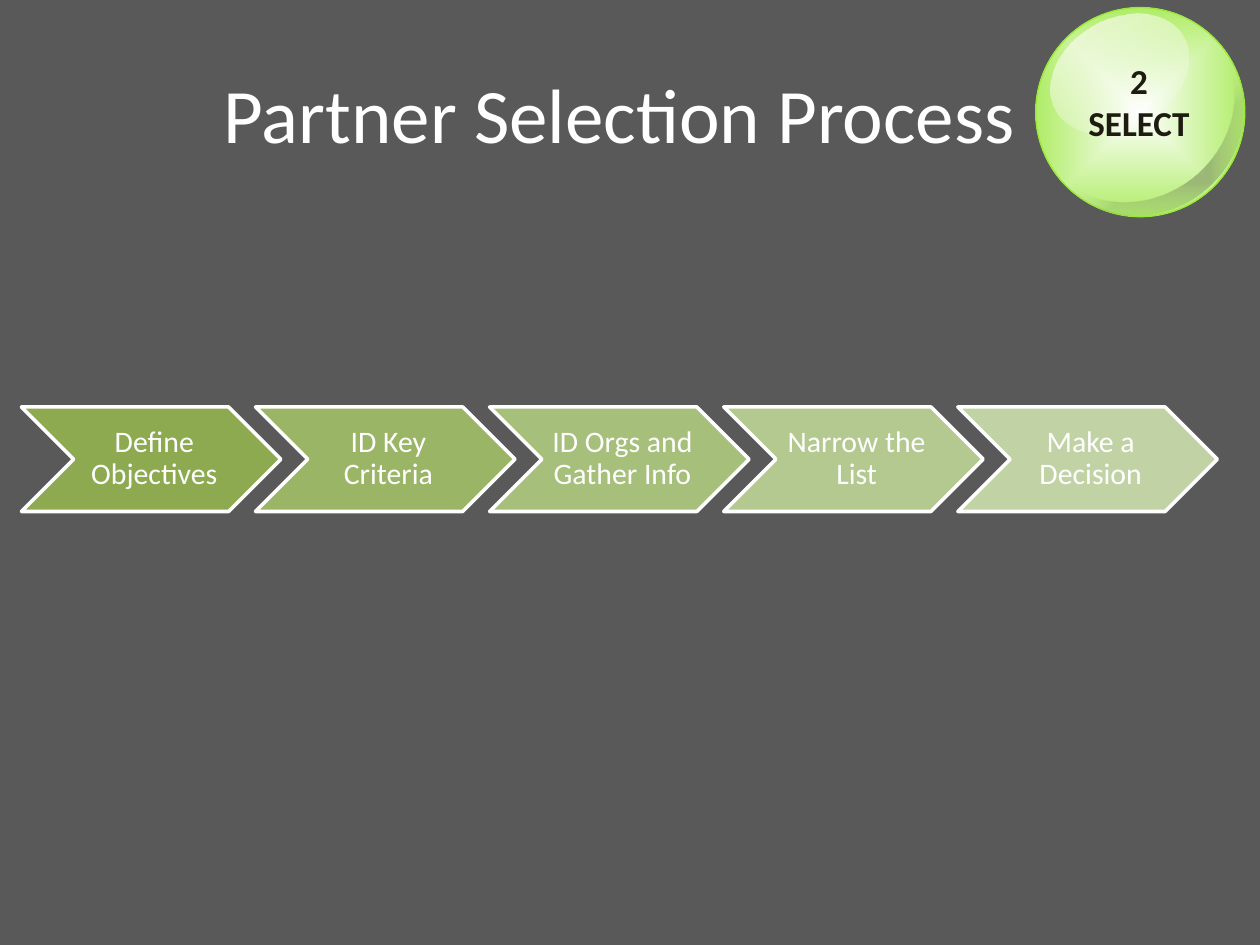
from dataclasses import dataclass
from typing import Optional

import lxml.etree
import pptx
import pptx.dml.color
import pptx.enum.shapes
import pptx.enum.text
import pptx.oxml
import pptx.oxml.ns
import pptx.util

Inches = pptx.util.Inches
Pt = pptx.util.Pt
RGBColor = pptx.dml.color.RGBColor
MSO_SHAPE = pptx.enum.shapes.MSO_SHAPE

FONT = "Calibri"
WHITE = RGBColor(0xFF, 0xFF, 0xFF)
BLACK = RGBColor(0x00, 0x00, 0x00)
CREAM = RGBColor(0xFF, 0xFC, 0xF9)
LIME = RGBColor(0x98, 0xE7, 0x39)
INK = RGBColor(0x1E, 0x1C, 0x11)
GRAY = RGBColor(0x59, 0x59, 0x59)

STEP_LEFT, STEP_TOP, STEP_PITCH = 0.17, 3.23, 1.858
STEP_WIDTH, STEP_HEIGHT = 2.06, 0.83
LABEL_INDENT, LABEL_WIDTH = 0.41, 1.24

RADIAL = (
    '<a:path path="shape">'
    '<a:fillToRect l="50000" t="50000" r="50000" b="50000"/></a:path>'
)
DOWNWARD = '<a:lin ang="5400000" scaled="0"/>'


@dataclass
class Step:
    label: str
    color: RGBColor


@dataclass
class Stop:
    position: int
    color: RGBColor
    opacity: int = 100


@dataclass
class GlassPart:
    kind: MSO_SHAPE
    box: tuple[float, float, float, float]
    rotation: float
    stops: list[Stop]
    direction: str
    line: Optional[RGBColor] = None
    adjustment: Optional[float] = None


STEPS = [
    Step("Define Objectives", RGBColor(0x8D, 0xAA, 0x51)),
    Step("ID Key Criteria", RGBColor(0x9A, 0xB5, 0x65)),
    Step("ID Orgs and Gather Info", RGBColor(0xA6, 0xBF, 0x7A)),
    Step("Narrow the List", RGBColor(0xB3, 0xC9, 0x90)),
    Step("Make a Decision", RGBColor(0xC1, 0xD3, 0xA5)),
]

BADGE = [
    GlassPart(MSO_SHAPE.OVAL, (8.22, 0.06, 1.66, 1.66), 338.6,
              [Stop(0, WHITE), Stop(100, LIME)], RADIAL, line=LIME),
    GlassPart(MSO_SHAPE.MOON, (8.94, 0.44, 0.73, 1.61), 53.6,
              [Stop(24, BLACK, 24), Stop(100, WHITE, 0)], RADIAL, adjustment=0.19),
    GlassPart(MSO_SHAPE.OVAL, (8.3, 0.15, 1.17, 0.87), 329.4,
              [Stop(0, CREAM, 77), Stop(100, WHITE, 0)], DOWNWARD),
]


def set_gradient(sp, stops: list[Stop], direction: str) -> None:
    sp.fill.background()
    stop_xml = "".join(
        f'<a:gs pos="{stop.position * 1000}"><a:srgbClr val="{stop.color}">'
        f'<a:alpha val="{stop.opacity * 1000}"/></a:srgbClr></a:gs>'
        for stop in stops
    )
    gradient = pptx.oxml.parse_xml(
        f'<a:gradFill {pptx.oxml.ns.nsdecls("a")} rotWithShape="1">'
        f"<a:gsLst>{stop_xml}</a:gsLst>{direction}</a:gradFill>"
    )
    sp_pr = sp.element.spPr
    sp_pr.replace(sp_pr.find(pptx.oxml.ns.qn("a:noFill")), gradient)


def add_text(s, text: str, box: tuple[float, float, float, float], size: float,
             color: RGBColor, bold: bool = False):
    tf = s.shapes.add_textbox(*map(Inches, box)).text_frame
    tf.word_wrap = True
    tf.vertical_anchor = pptx.enum.text.MSO_ANCHOR.MIDDLE
    tf.text = text
    for p in tf.paragraphs:
        p.alignment = pptx.enum.text.PP_ALIGN.CENTER
        for r in p.runs:
            r.font.name = FONT
            r.font.size = Pt(size)
            r.font.bold = bold
            r.font.color.rgb = color
    return tf


def add_step(s, index: int, step: Step) -> None:
    left = STEP_LEFT + index * STEP_PITCH
    sp = s.shapes.add_shape(MSO_SHAPE.CHEVRON, Inches(left), Inches(STEP_TOP),
                            Inches(STEP_WIDTH), Inches(STEP_HEIGHT))
    sp.shadow.inherit = False
    sp.fill.solid()
    sp.fill.fore_color.rgb = step.color
    sp.line.color.rgb = WHITE
    sp.line.width = Pt(2)
    tf = add_text(s, step.label,
                  (left + LABEL_INDENT, STEP_TOP, LABEL_WIDTH, STEP_HEIGHT), 17, WHITE)
    tf.margin_left = Inches(0.07)
    tf.margin_right = tf.margin_top = tf.margin_bottom = Inches(0.02)
    tf.paragraphs[0].line_spacing = 0.9


def add_glass_part(s, part: GlassPart) -> None:
    sp = s.shapes.add_shape(part.kind, *map(Inches, part.box))
    sp.shadow.inherit = False
    sp.rotation = part.rotation
    sp.element.spPr.xfrm.set("flipH", "1")
    if part.adjustment is not None:
        sp.adjustments[0] = part.adjustment
    set_gradient(sp, part.stops, part.direction)
    if part.line is None:
        sp.line.fill.background()
    else:
        sp.line.color.rgb = part.line
        sp.line.width = Pt(0.75)


def main() -> None:
    prs = pptx.Presentation()
    prs.slide_width, prs.slide_height = Inches(10), Inches(7.5)
    s = prs.slides.add_slide(prs.slide_layouts[6])
    s.background.fill.solid()
    s.background.fill.fore_color.rgb = GRAY

    add_text(s, "Partner Selection Process", (0.67, 0.09, 8.5, 1.61), 44, WHITE)
    for index, step in enumerate(STEPS):
        add_step(s, index, step)
    for part in BADGE:
        add_glass_part(s, part)
    tf = add_text(s, "2\nSELECT", (8.25, 0.42, 1.58, 1.08), 20, INK, bold=True)
    tf.vertical_anchor = pptx.enum.text.MSO_ANCHOR.TOP

    prs.save("out.pptx")


if __name__ == "__main__":
    main()
